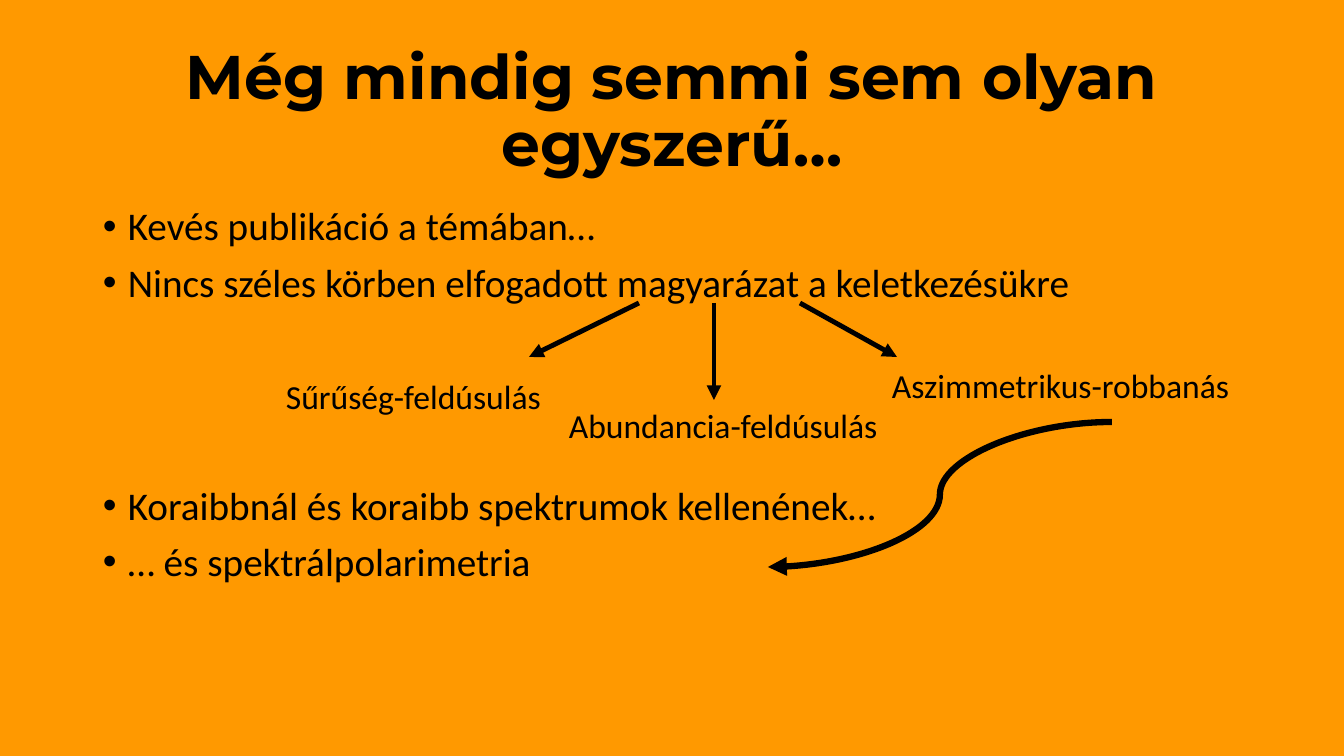
from lxml import etree
from pptx import Presentation
from pptx.dml.color import RGBColor
from pptx.enum.shapes import MSO_CONNECTOR
from pptx.enum.text import MSO_ANCHOR, MSO_AUTO_SIZE, PP_ALIGN
from pptx.oxml.ns import qn
from pptx.util import Pt

STRAIGHT, CURVE = MSO_CONNECTOR.STRAIGHT, MSO_CONNECTOR.CURVE
MIDDLE, TOP = MSO_ANCHOR.MIDDLE, MSO_ANCHOR.TOP
CENTER, LEFT = PP_ALIGN.CENTER, PP_ALIGN.LEFT
NO_FIT, GROW = MSO_AUTO_SIZE.NONE, MSO_AUTO_SIZE.SHAPE_TO_FIT_TEXT

COLORS = {"background": "FF9900", "ink": "000000"}
HEADING_FONT, BODY_FONT = "Montserrat", "Calibri"

TITLE = "Még mindig semmi sem olyan egyszerű…"
BULLETS = [
    ("Kevés publikáció a témában…", 0),
    ("Nincs széles körben elfogadott magyarázat a keletkezésükre", 10),
    ("Koraibbnál és koraibb spektrumok kellenének…", 129),
    ("… és spektrálpolarimetria", 10),
]
EXPLANATIONS = [
    ("Sűrűség-feldúsulás", (276, 371, 308, 50)),
    ("Abundancia-feldúsulás", (559, 400, 339, 50)),
    ("Aszimmetrikus-robbanás", (882, 360, 370, 50)),
]
ARROWS = [
    (STRAIGHT, (639, 303, 529, 357), 3.5),
    (STRAIGHT, (714, 303, 714, 400), 3.5),
    (STRAIGHT, (800, 303, 897, 357), 3.5),
    (CURVE, (1112, 422, 768, 567), 4.5),
]

WIDTH, HEIGHT = 1344, 756
MARGIN = 93
CONTENT_WIDTH = WIDTH - 2 * MARGIN
TITLE_BOX = (MARGIN, 40, CONTENT_WIDTH, 146)
BODY_BOX = (MARGIN, 202, CONTENT_WIDTH, 511)
BULLET_INDENT = 25


def px(n):
    return round(n * 914400 / 100.8)


def rgb(name):
    return RGBColor.from_string(COLORS[name])


def add_run(p, text, size, font, bold=False):
    r = p.add_run()
    r.text = text
    r.font.size = Pt(size)
    r.font.name = font
    r.font.bold = bold
    r.font.color.rgb = rgb("ink")


def add_text_box(slide, box):
    sp = slide.shapes.add_textbox(*map(px, box))
    sp.text_frame.word_wrap = True
    return sp.text_frame


def add_bullet(p):
    pPr = p._p.get_or_add_pPr()
    pPr.set("marL", str(px(BULLET_INDENT)))
    pPr.set("indent", str(-px(BULLET_INDENT)))
    etree.SubElement(pPr, qn("a:buFont")).set("typeface", "Arial")
    etree.SubElement(pPr, qn("a:buChar")).set("char", "•")


def add_title(slide):
    sp = slide.shapes.title
    sp.left, sp.top, sp.width, sp.height = map(px, TITLE_BOX)
    tf = sp.text_frame
    tf.word_wrap = True
    tf.auto_size = NO_FIT
    tf.vertical_anchor = MIDDLE
    p = tf.paragraphs[0]
    p.alignment = CENTER
    p.line_spacing = 0.9
    p.space_before = Pt(0)
    add_run(p, TITLE, 44, HEADING_FONT, True)


def add_bullets(slide):
    tf = add_text_box(slide, BODY_BOX)
    tf.vertical_anchor = TOP
    for i, (text, before) in enumerate(BULLETS):
        p = tf.add_paragraph() if i else tf.paragraphs[0]
        add_bullet(p)
        p.alignment = LEFT
        p.line_spacing = 0.9
        p.space_before = Pt(before)
        add_run(p, text, 28, BODY_FONT)


def add_explanation(slide, text, box):
    tf = add_text_box(slide, box)
    tf.auto_size = GROW
    add_run(tf.paragraphs[0], text, 24, BODY_FONT)


def add_arrow(slide, kind, ends, weight):
    line = slide.shapes.add_connector(kind, *map(px, ends))
    line.line.color.rgb = rgb("ink")
    line.line.width = Pt(weight)
    ln = line.line._get_or_add_ln()
    etree.SubElement(ln, qn("a:tailEnd")).set("type", "triangle")
    etree.SubElement(line._element.spPr, qn("a:effectLst"))


def main():
    prs = Presentation()
    prs.slide_width, prs.slide_height = px(WIDTH), px(HEIGHT)
    slide = prs.slides.add_slide(prs.slide_layouts[5])
    fill = slide.background.fill
    fill.solid()
    fill.fore_color.rgb = rgb("background")
    add_title(slide)
    add_bullets(slide)
    for text, box in EXPLANATIONS:
        add_explanation(slide, text, box)
    for kind, ends, weight in ARROWS:
        add_arrow(slide, kind, ends, weight)
    prs.save("out.pptx")


if __name__ == "__main__":
    main()
